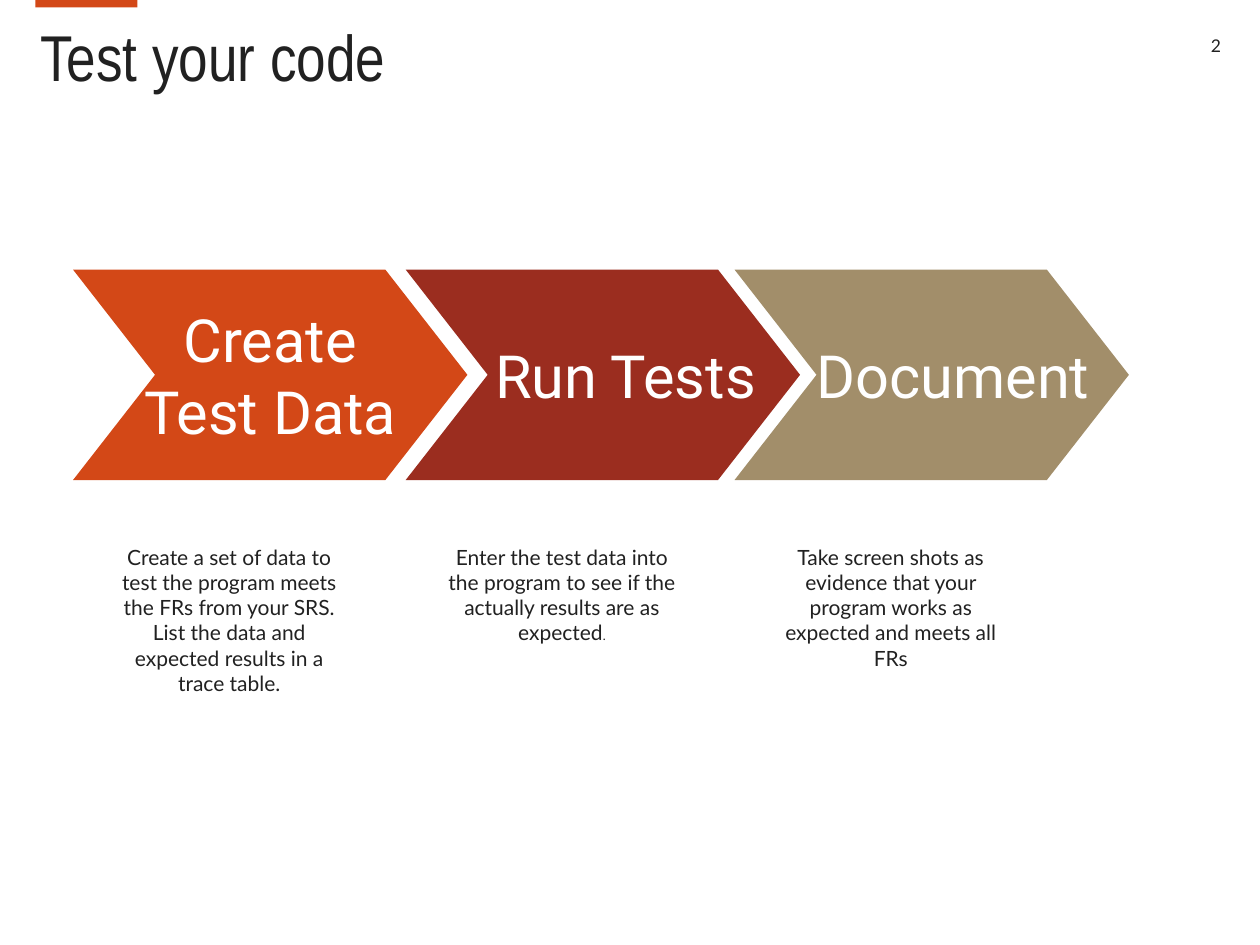
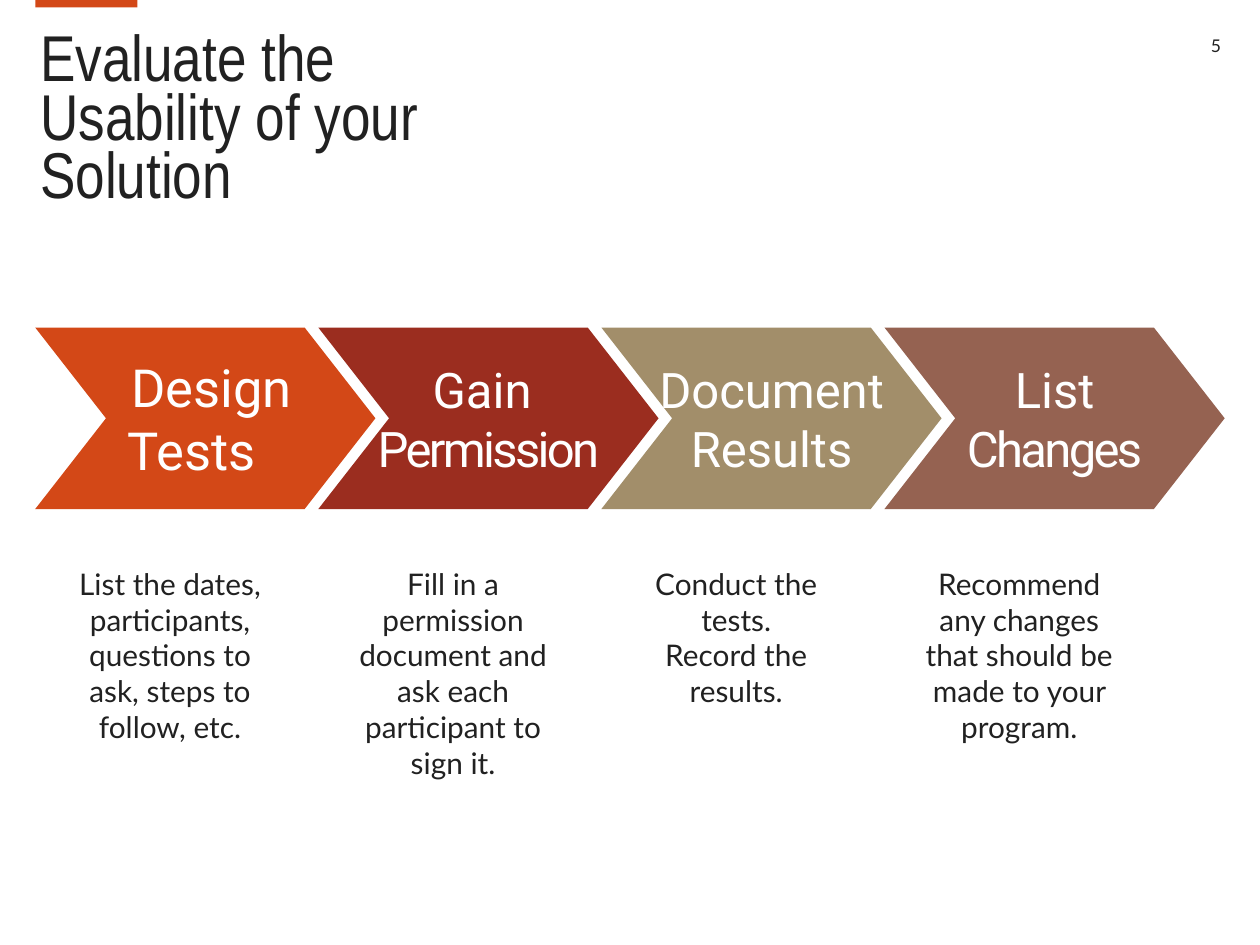
from pptx import Presentation, util as u
from pptx.dml.color import RGBColor
from pptx.enum import shapes, text

# Shared look
COLORS = {"ink": "212121", "white": "FFFFFF", "orange": "D34817",
          "red": "9B2D1F", "sand": "A28E6A", "brown": "956251"}
STEP_COLORS = ["orange", "red", "sand", "brown"]
TITLE = {"name": "Arial Narrow", "size": 37, "color": "ink"}
NUMBER = {"name": "Lato", "size": 10, "color": "ink"}
HEADING = {"name": "Roboto", "color": "white"}
DETAIL = {"name": "Lato", "color": "ink"}
TIGHT = (0.04, 0.02, 0.04, 0.02)
HEADING_PADDING = (0.27, 0.13, 0.27, 0.13)
NOTCH = 0.208  # depth of the arrow point as a share of its width

# Content: each heading line is (words, shift from the centre, letter spacing)
# and each detail is a list of paragraphs made of (words, size) runs
SLIDES = [
    {"title": "Test your code", "title_height": 0.51, "number": "2",
     "lefts": [0.58, 3.22, 5.83], "top": 2.14, "size": (3.13, 1.67),
     "detail_offset": 0.22, "detail_top": 4.27, "detail_width": 2.04,
     "steps": [
         {"heading": [("Create", 0, 0), ("Test Data", 0, 0)], "heading_size": 34,
          "detail": [[("Create a set of data to test the program meets "
                       "the FRs from your SRS.", 12)],
                     [("List the data and expected results in a trace table.", 12)]],
          "detail_height": 1.75},
         {"heading": [("Run Tests", 0.18, 0)], "heading_size": 34,
          "detail": [[("Enter the test data into the program to see if the "
                       "actually results are as expected", 12), (".", 7)]],
          "detail_height": 1.28},
         {"heading": [("Document", 0.17, 0)], "heading_size": 34,
          "detail": [[("Take screen shots as evidence that your program works "
                       "as expected and meets all FRs", 12)]],
          "detail_height": 1.28},
     ]},
    {"title": "Evaluate the\vUsability of your\vSolution", "title_height": 1.44,
     "number": "5",
     "lefts": [0.28 + 6.74 / 3 * i for i in range(4)], "top": 2.6, "size": (2.7, 1.44),
     "detail_offset": 0.19, "detail_top": 4.44, "detail_width": 1.76,
     "steps": [
         {"heading": [("Design", 0.05, 0), ("Tests", -0.11, 0)], "heading_size": 30,
          "detail": [[("List the dates, participants, questions to ask, "
                       "steps to follow, etc.", 17)]],
          "detail_height": 1.53},
         {"heading": [("Gain", -0.05, 0), ("Permission", 0, -1.5)], "heading_size": 28,
          "detail": [[("Fill in a permission document and ask each participant "
                       "to sign it.", 17)]],
          "detail_height": 1.82},
         {"heading": [("Document", 0, 0), ("Results", 0, 0)], "heading_size": 28,
          "detail": [[("Conduct the tests.", 17)], [("Record the results.", 17)]],
          "detail_height": 1.25},
         {"heading": [("List", 0, 0), ("Changes", 0, -1.5)], "heading_size": 28,
          "detail": [[("Recommend any changes that should be made to your "
                       "program.", 17)]],
          "detail_height": 1.53},
     ]},
]


def paint(part, color):
    part.fill.solid()
    part.fill.fore_color.rgb = RGBColor.from_string(COLORS[color])
    part.line.fill.background()
    part.shadow.inherit = False


def style(font, **values):
    font.color.rgb = RGBColor.from_string(COLORS[values.pop("color")])
    values["size"] = u.Pt(values["size"])
    for name, value in values.items():
        setattr(font, name, value)


def set_frame(frame, padding=(0.1, 0.05, 0.1, 0.05), **values):
    sides = ("left", "top", "right", "bottom")
    margins = {f"margin_{side}": u.Inches(gap) for side, gap in zip(sides, padding)}
    values = {"word_wrap": True, "vertical_anchor": text.MSO_ANCHOR.TOP,
              **margins, **values}
    for name, value in values.items():
        setattr(frame, name, value)


def next_paragraph(frame, index, align):
    paragraph = frame.paragraphs[0] if index == 0 else frame.add_paragraph()
    paragraph.alignment = align
    return paragraph


def add_frame_parts(slide, content):
    """Top band, title and page number."""
    band = slide.shapes.add_shape(shapes.MSO_SHAPE.RECTANGLE, u.Inches(0.28), 0,
                                  u.Inches(0.81), u.Inches(0.06))
    paint(band, "orange")

    title = slide.shapes.title
    place = {"left": 0.28, "top": 0.26, "width": 8.62, "height": content["title_height"]}
    for name, value in place.items():
        setattr(title, name, u.Inches(value))
    set_frame(title.text_frame, TIGHT, auto_size=text.MSO_AUTO_SIZE.SHAPE_TO_FIT_TEXT)
    title.text_frame.text = content["title"]
    line = title.text_frame.paragraphs[0]
    line.alignment = text.PP_ALIGN.LEFT
    line.line_spacing = 0.75
    for run in line.runs:
        style(run.font, **TITLE)

    number = slide.shapes.add_textbox(*map(u.Inches, (9.05, 0.26, 0.68, 0.21)))
    set_frame(number.text_frame, TIGHT)
    run = next_paragraph(number.text_frame, 0, text.PP_ALIGN.RIGHT).add_run()
    run.text = content["number"]
    style(run.font, **NUMBER)


def add_arrow(group, left, top, width, height, color):
    notch = NOTCH * width
    right, middle, bottom = left + width, top + height / 2, top + height
    corners = [(left, top), (left + notch, middle), (left, bottom),
               (right - notch, bottom), (right, middle), (right - notch, top)]
    start, *rest = [(u.Inches(x), u.Inches(y)) for x, y in corners]
    outline = group.shapes.build_freeform(*start)
    outline.add_line_segments(rest, close=True)
    arrow = outline.convert_to_shape()
    paint(arrow, color)
    return arrow


def fill_heading(frame, lines, size):
    # The padding carries the smallest shift, indents carry the rest
    base = min(shift for _, shift, _ in lines)
    left, top, right, bottom = HEADING_PADDING
    set_frame(frame, (left + 2 * base, top, right, bottom), word_wrap=False,
              vertical_anchor=text.MSO_ANCHOR.MIDDLE)
    for i, (words, shift, spacing) in enumerate(lines):
        paragraph = next_paragraph(frame, i, text.PP_ALIGN.CENTER)
        if shift > base:
            paragraph._p.get_or_add_pPr().set("marL", str(u.Inches(2 * (shift - base))))
        run = paragraph.add_run()
        run.text = words
        style(run.font, size=size, **HEADING)
        if spacing:
            run._r.get_or_add_rPr().set("spc", str(int(spacing * 100)))


def fill_detail(frame, paragraphs):
    set_frame(frame, auto_size=text.MSO_AUTO_SIZE.SHAPE_TO_FIT_TEXT)
    for i, runs in enumerate(paragraphs):
        paragraph = next_paragraph(frame, i, text.PP_ALIGN.CENTER)
        for words, size in runs:
            run = paragraph.add_run()
            run.text = words
            style(run.font, size=size, **DETAIL)


def add_steps(slide, content):
    for step, left, color in zip(content["steps"], content["lefts"], STEP_COLORS):
        group = slide.shapes.add_group_shape()
        arrow = add_arrow(group, left, content["top"], *content["size"], color)
        fill_heading(arrow.text_frame, step["heading"], step["heading_size"])
        place = (left + content["detail_offset"], content["detail_top"],
                 content["detail_width"], step["detail_height"])
        detail = group.shapes.add_textbox(*map(u.Inches, place))
        fill_detail(detail.text_frame, step["detail"])


def main():
    deck = Presentation()
    deck.slide_width, deck.slide_height = u.Inches(10), u.Inches(7.5)
    title_only = deck.slide_layouts[5]
    for content in SLIDES:
        slide = deck.slides.add_slide(title_only)
        add_frame_parts(slide, content)
        add_steps(slide, content)
    deck.save("out.pptx")


if __name__ == "__main__":
    main()
